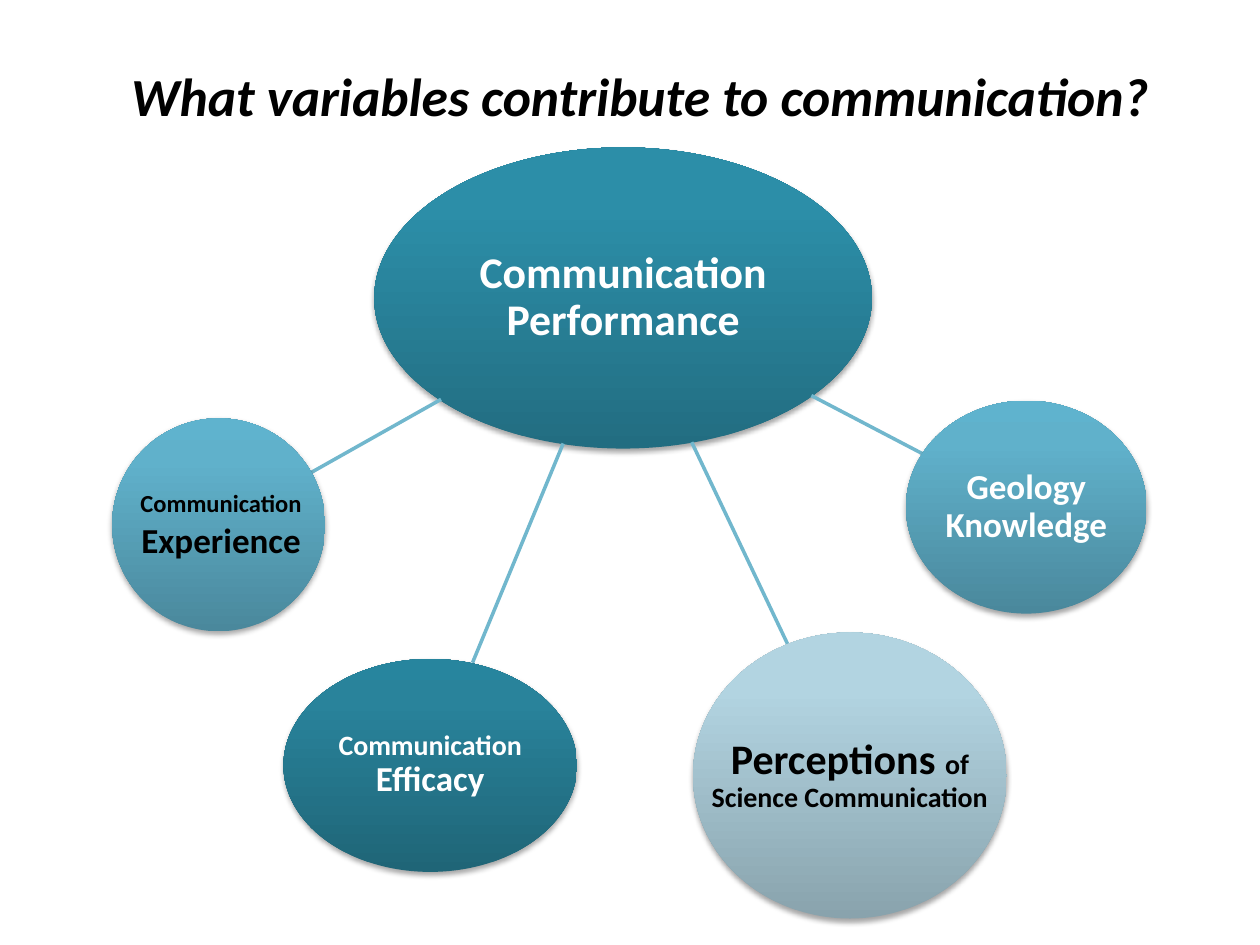
from copy import deepcopy

from lxml import etree
from pptx import Presentation
from pptx import util as u
from pptx.dml.color import RGBColor
from pptx.enum import shapes, text
from pptx.oxml import ns

FONT = "Calibri"
BLACK, WHITE, LINE = "000000", "FFFFFF", "71B7CD"
DARK = ("226D81", "2C8EA8", "2A90AB")
DEEP = ("1F6577", "29839B", "27859E")
MID = ("4A889C", "60B1CB", "5FB3CE")
PALE = ("89A3AD", "B2D4E1", "B2D5E3")


def color(value):
    return RGBColor.from_string(value)


def add_run(paragraph, content, size, fill=BLACK, italic=False):
    run = paragraph.add_run()
    run.text = content
    font = run.font
    font.name, font.size = FONT, u.Pt(size)
    font.bold, font.italic = True, italic
    font.color.rgb = color(fill)


class Diagram:
    """Holds the slide and draws each kind of element in one style."""

    def __init__(self, slide):
        self.slide = slide

    def label(self, box, runs, inset=0.02, spacing=0.9, **style):
        shape = self.slide.shapes.add_textbox(*map(u.Inches, box))
        frame = shape.text_frame
        frame.word_wrap = True
        frame.vertical_anchor = text.MSO_ANCHOR.MIDDLE
        frame.margin_left = frame.margin_right = u.Inches(inset)
        frame.margin_top = frame.margin_bottom = u.Inches(inset / 2)
        paragraph = frame.paragraphs[0]
        paragraph.alignment = text.PP_ALIGN.CENTER
        paragraph.line_spacing = spacing
        for content, size in runs:
            add_run(paragraph, content, size, **style)

    def bubble(self, box, colors):
        shape = self.slide.shapes.add_shape(
            shapes.MSO_SHAPE.OVAL, *map(u.Inches, box))
        shape.line.fill.background()
        self.gradient(shape, colors)
        self.shadow(shape)

    def gradient(self, shape, colors):
        shape.fill.gradient()
        shape.fill.gradient_angle = 90
        stop_list = shape._element.spPr.find(".//" + ns.qn("a:gsLst"))
        stop_list.append(deepcopy(stop_list[-1]))
        stops = shape.fill.gradient_stops
        for stop, position, value in zip(stops, (0, 0.8, 1), colors):
            stop.position = position
            stop.color.rgb = color(value)

    def shadow(self, shape):
        shape.shadow.inherit = False
        effects = shape._element.spPr.find(ns.qn("a:effectLst"))
        outer = etree.SubElement(
            effects, ns.qn("a:outerShdw"), blurRad=str(u.Pt(3.1)),
            dist=str(u.Pt(1.8)), dir="5400000", rotWithShape="0")
        black = etree.SubElement(outer, ns.qn("a:srgbClr"), val=BLACK)
        etree.SubElement(black, ns.qn("a:alpha"), val="35000")

    def spoke(self, *ends):
        connector = self.slide.shapes.add_connector(
            shapes.MSO_CONNECTOR.STRAIGHT, *map(u.Inches, ends))
        connector.line.color.rgb = color(LINE)
        connector.line.width = u.Pt(2)
        etree.SubElement(connector._element.spPr, ns.qn("a:effectLst"))


def main():
    presentation = Presentation()
    presentation.slide_width = u.Inches(10)
    presentation.slide_height = u.Inches(7.5)
    slide = presentation.slides.add_slide(presentation.slide_layouts[6])
    diagram = Diagram(slide)

    # Title
    diagram.label((0.58, 0.17, 9, 1.17),
                  [("What variables contribute to communication?", 30.6)],
                  inset=0.1, spacing=1, italic=True)

    # Central bubble
    center = (2.97, 1.17, 3.95, 2.39)
    diagram.bubble(center, DARK)
    diagram.label(center, [("Communication Performance", 25)], fill=WHITE)

    # Surrounding variables: spoke, bubble, gradient, text colour, runs
    variables = [
        ((4.47, 3.52, 3.75, 5.26), (2.25, 5.23, 2.33, 1.69), DEEP, WHITE,
         [("Communication", 16), (" ", 14), ("Efficacy", 20)]),
        ((6.44, 3.14, 7.32, 3.6), (7.19, 3.18, 1.91, 1.69), MID, WHITE,
         [("Geology Knowledge", 20)]),
        ((5.49, 3.51, 6.25, 5.11), (5.5, 5.02, 2.49, 2.27), PALE, BLACK,
         [("Perceptions ", 24), ("of Science Communication", 16)]),
        ((3.5, 3.17, 2.47, 3.75), (0.89, 3.32, 1.69, 1.69), MID, BLACK, []),
    ]
    for ends, box, colors, fill, runs in variables:
        diagram.spoke(*ends)
        diagram.bubble(box, colors)
        if runs:
            diagram.label(box, runs, fill=fill)

    # The experience label sits slightly right of its bubble
    diagram.label((0.92, 3.79, 1.67, 0.71),
                  [("Communication", 14), (" ", 16), ("Experience", 20)],
                  inset=0.1, spacing=1)

    presentation.save("out.pptx")


if __name__ == "__main__":
    main()
